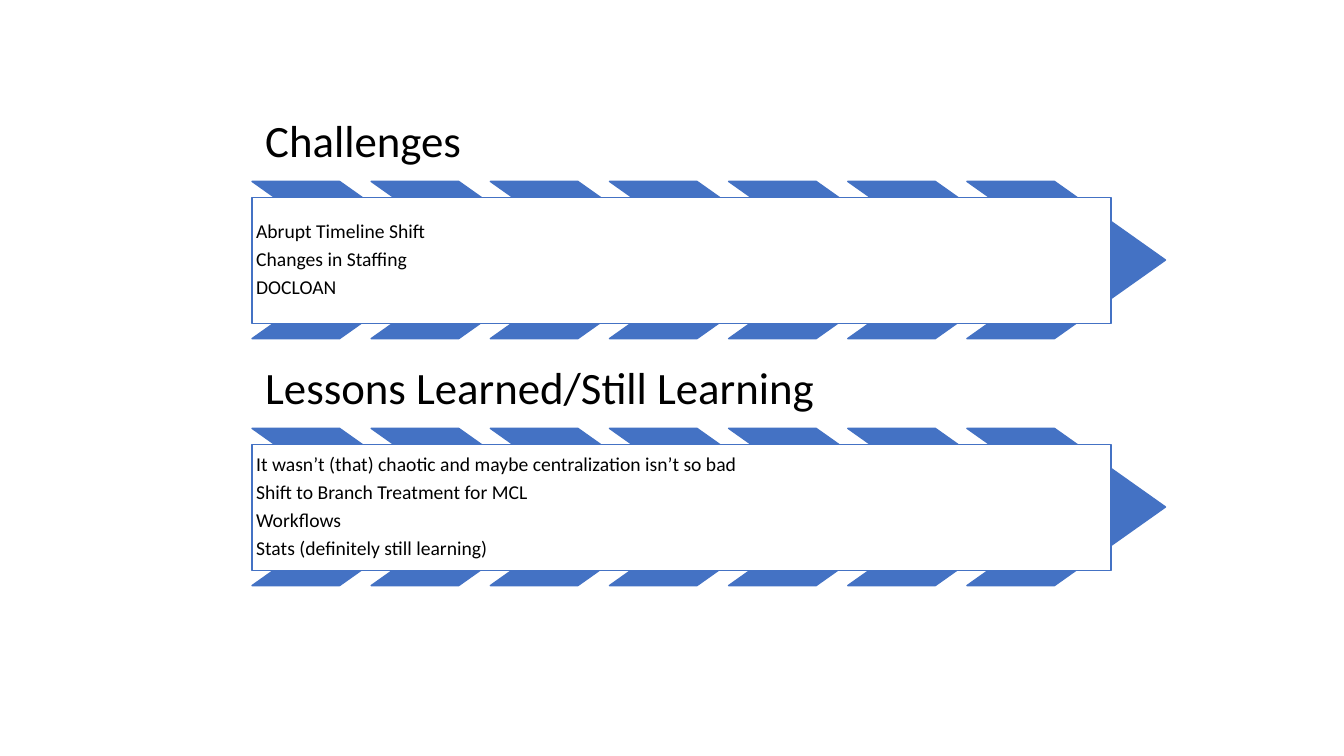
from dataclasses import dataclass

from pptx import Presentation
from pptx.dml.color import RGBColor as Color
from pptx.enum.shapes import MSO_SHAPE as Shape
from pptx.enum.text import MSO_ANCHOR as Anchor, PP_ALIGN as Align
from pptx.util import Inches, Pt


@dataclass(frozen=True)
class Theme:
    blue: Color = Color(0x44, 0x72, 0xC4)
    white: Color = Color(0xFF, 0xFF, 0xFF)
    black: Color = Color(0, 0, 0)
    font: str = "Calibri"
    head: int = 32
    body: int = 14


THEME = Theme()
PANELS = [
    ("Challenges", ["Abrupt Timeline Shift", "Changes in Staffing", "DOCLOAN"]),
    ("Lessons Learned/Still Learning", [
        "It wasn’t (that) chaotic and maybe centralization isn’t so bad",
        "Shift to Branch Treatment for MCL",
        "Workflows",
        "Stats (definitely still learning)",
    ]),
]


def write(shape, lines, size, inset, anchor):
    frame = shape.text_frame
    frame.word_wrap = True
    frame.vertical_anchor = anchor
    frame.margin_left = frame.margin_right = Inches(inset)
    frame.margin_top = frame.margin_bottom = Inches(inset)
    for i, line in enumerate(lines):
        para = frame.add_paragraph() if i else frame.paragraphs[0]
        para.alignment = Align.LEFT
        para.line_spacing = 0.9
        para.space_after = Pt(0.35 * size)
        run = para.add_run()
        run.text = line
        run.font.name = THEME.font
        run.font.size = Pt(size)
        run.font.color.rgb = THEME.black


def add_block(slide, kind, left, top, width, height, fill):
    shape = slide.shapes.add_shape(
        kind, Inches(left), Inches(top), Inches(width), Inches(height))
    shape.shadow.inherit = False
    shape.fill.solid()
    shape.fill.fore_color.rgb = fill
    shape.line.color.rgb = THEME.blue
    shape.line.width = Pt(1)
    return shape


def add_panel(slide, left, top, width, title, lines):
    head = slide.shapes.add_textbox(
        Inches(left), Inches(top), Inches(width), Inches(0.76))
    write(head, [title], THEME.head, 0.13, Anchor.BOTTOM)
    band = top + 0.77
    step = (width + 0.65 - 1.97) / 6
    for i in range(7):
        arrow = add_block(slide, Shape.CHEVRON, left + i * step, band,
                          1.97, 1.56, THEME.blue)
        arrow.adjustments[0] = 0.706
    card = add_block(slide, Shape.RECTANGLE, left, band + 0.16,
                     width + 0.11, 1.25, THEME.white)
    write(card, lines, THEME.body, 0.04, Anchor.MIDDLE)


def main():
    deck = Presentation()
    deck.slide_width = Inches(13.33)
    deck.slide_height = Inches(7.5)
    slide = deck.slides.add_slide(deck.slide_layouts[6])
    for i, (title, lines) in enumerate(PANELS):
        add_panel(slide, 2.5, 1.03 + i * 2.45, 8.41, title, lines)
    deck.save("out.pptx")


if __name__ == "__main__":
    main()
